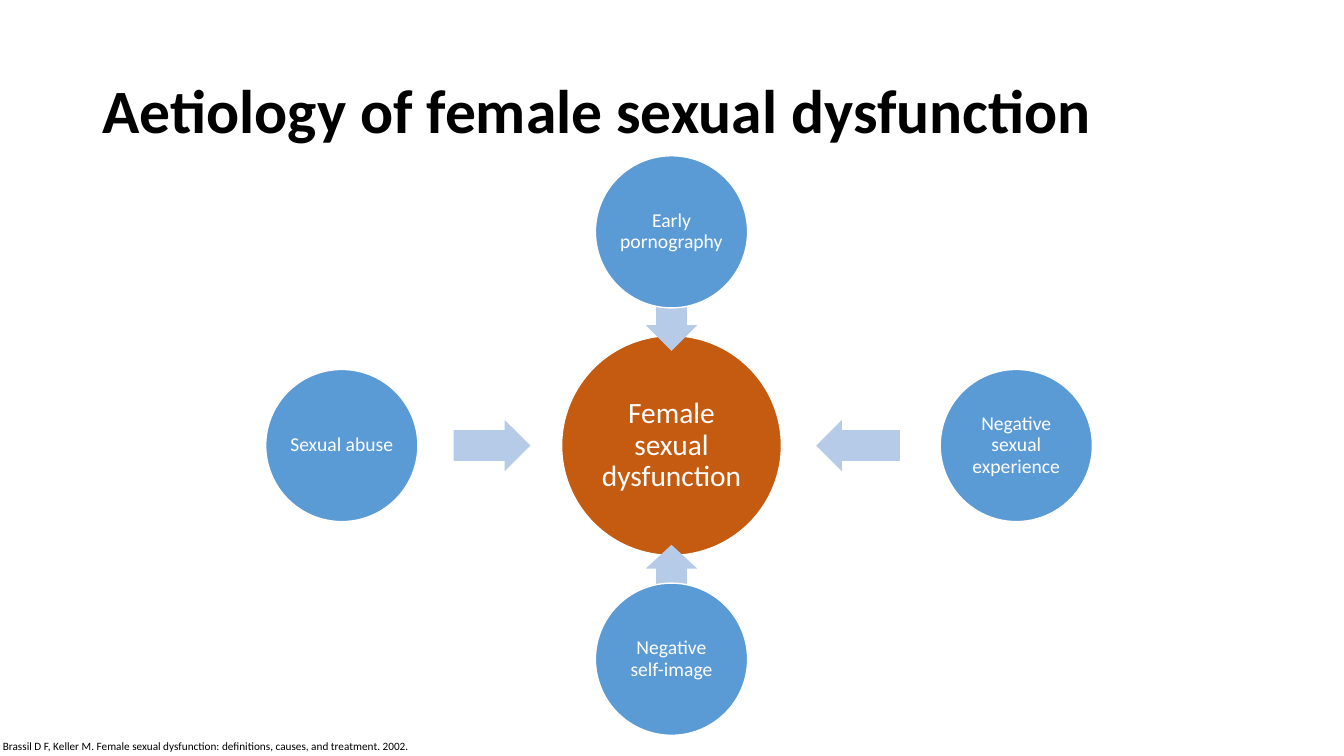
"""Build a slide showing four causes pointing at female sexual dysfunction."""
import pptx
import pptx.util
import pptx.dml.color
import pptx.enum.shapes
import pptx.enum.text

Inches = pptx.util.Inches
Shapes = pptx.enum.shapes.MSO_SHAPE
Anchor = pptx.enum.text.MSO_ANCHOR
Align = pptx.enum.text.PP_ALIGN

THEME = {
    "font": "Calibri",
    "black": "000000", "white": "FFFFFF",
    "centre": "C55A11", "cause": "5B9BD5", "arrow": "B5CBE7",
    "title_size": 44, "centre_size": 21, "cause_size": 14, "source_size": 8,
}


def write_text(shape, text, size, colour, frame_format, bold=False, align=Align.LEFT, spacing=0.9):
    frame = shape.text_frame
    for name, value in {"word_wrap": True, **frame_format}.items():
        setattr(frame, name, value)
    paragraph = frame.paragraphs[0]
    paragraph.alignment = align
    paragraph.line_spacing = spacing
    run = paragraph.add_run()
    run.text = text
    font_format = {"name": THEME["font"], "size": pptx.util.Pt(size), "bold": bold}
    for name, value in font_format.items():
        setattr(run.font, name, value)
    run.font.color.rgb = pptx.dml.color.RGBColor.from_string(colour)


def add_centred(kind, centre_x, centre_y, width, height, fill):
    shape = slide.shapes.add_shape(
        kind, Inches(centre_x - width / 2), Inches(centre_y - height / 2), Inches(width), Inches(height))
    shape.shadow.inherit = False
    shape.fill.solid()
    shape.fill.fore_color.rgb = pptx.dml.color.RGBColor.from_string(fill)
    shape.line.fill.background()
    return shape


presentation = pptx.Presentation()
presentation.slide_width = Inches(13.33)
presentation.slide_height = Inches(7.5)
slide = presentation.slides.add_slide(presentation.slide_layouts[6])

title = slide.shapes.add_textbox(Inches(0.92), Inches(0.4), Inches(11.5), Inches(1.45))
write_text(title, "Aetiology of female sexual dysfunction", THEME["title_size"], THEME["black"],
           {"vertical_anchor": Anchor.MIDDLE}, bold=True)

middle_x, middle_y = 6.66, 4.42
circles = [("Female sexual dysfunction", middle_x, middle_y, 2.18, "centre", None)]
causes = [
    ("Early pornography", 0, -2.12, 0, -1.2, 0.52, 90),
    ("Negative sexual experience", 3.42, 0, 1.85, 0, 0.83, 180),
    ("Negative self-image", 0, 2.12, 0, 1.22, 0.47, 270),
    ("Sexual abuse", -3.27, 0, -1.78, 0, 0.76, 0),
]
for text, circle_dx, circle_dy, arrow_dx, arrow_dy, length, rotation in causes:
    arrow = (middle_x + arrow_dx, middle_y + arrow_dy, length, rotation)
    circles.append((text, middle_x + circle_dx, middle_y + circle_dy, 1.51, "cause", arrow))

circle_frame = {"vertical_anchor": Anchor.MIDDLE}
for side in ("left", "top", "right", "bottom"):
    circle_frame[f"margin_{side}"] = Inches(0.02)

for text, centre_x, centre_y, diameter, role, arrow in circles:
    if arrow:
        arrow_x, arrow_y, length, rotation = arrow
        arrow_shape = add_centred(Shapes.RIGHT_ARROW, arrow_x, arrow_y, length, 0.51, THEME["arrow"])
        arrow_shape.adjustments[0] = 0.6
        arrow_shape.adjustments[1] = 0.5
        arrow_shape.rotation = rotation
    circle = add_centred(Shapes.OVAL, centre_x, centre_y, diameter, diameter, THEME[role])
    circle.line.color.rgb = pptx.dml.color.RGBColor.from_string(THEME["white"])
    circle.line.width = pptx.util.Pt(1)
    write_text(circle, text, THEME[f"{role}_size"], THEME["white"], circle_frame, align=Align.CENTER)

source = slide.shapes.add_textbox(Inches(-0.07), Inches(7.29), Inches(12.57), Inches(0.24))
write_text(source, "Brassil D F, Keller M. Female sexual dysfunction: definitions, causes, and treatment. 2002.",
           THEME["source_size"], THEME["black"], {}, spacing=1.0)

presentation.save("out.pptx")
